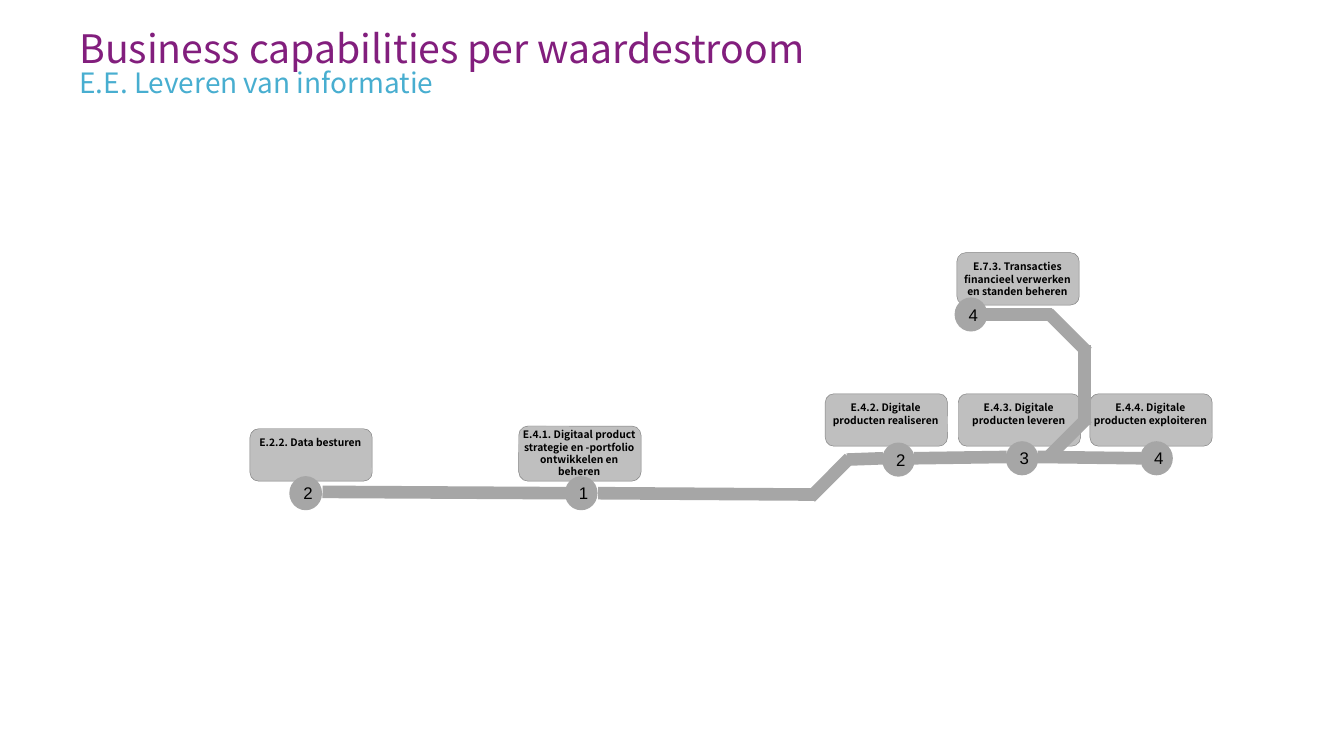
from lxml import etree
from pptx import Presentation
from pptx import util as u
from pptx.dml.color import RGBColor
from pptx.enum import shapes, text
from pptx.oxml import ns

PURPLE = RGBColor(0x82, 0x1E, 0x7D)
BLUE = RGBColor(0x48, 0xAE, 0xD0)
BLACK = RGBColor(0, 0, 0)
SILVER = RGBColor(0xBF, 0xBF, 0xBF)
EDGE = RGBColor(0x80, 0x80, 0x80)
TRACK = RGBColor(0xA6, 0xA6, 0xA6)

SANS, ARIAL = "Noto Sans CJK TC", "Arial"
CELL = u.Inches(0.01)  # the slide is a grid of square cells
COLS, ROWS = 1000, 562.5  # 16:9
CARD, DISC = (91, 39), (23, 24)

# label, card column and row, disc column and row, number
STOPS = [
    ("E.7.3. Transacties financieel verwerken en standen beheren",
     (526, 0), (525, 34), "4"),
    ("E.4.1. Digitaal product strategie en -portfolio ontwikkelen en beheren",
     (200, 129), (235, 167), "1"),
    ("E.2.2. Data besturen", (0, 131), (30, 167), "2"),
    ("E.4.2. Digitale producten realiseren", (428, 105), (471, 142), "2"),
    ("E.4.3. Digitale producten leveren", (527, 105), (563, 141), "3"),
    ("E.4.4. Digitale producten exploiteren", (625, 105), (663, 141), "4"),
]
RAILS = [
    ((663, 153), (586, 152)), ((563, 152), (494, 153)),
    ((235, 179), (54, 178)), ((421, 180), (259, 179)),
    ((417, 182), (446, 153)), ((471, 153), (444, 154)),
    ((594, 152), (623, 123)), ((594, 45), (623, 74)),
    ((597, 46), (548, 46)), ((621, 128), (621, 69)),
]


def cells(*counts):
    return [round(n * CELL) for n in counts]


def put(item, **values):
    for name, value in values.items():
        setattr(item, name, value)


def write(shape, words, font, para=None, **frame):
    """Set one paragraph with font, paragraph and frame formats."""
    put(shape.text_frame, word_wrap=True, **frame)
    line = shape.text_frame.paragraphs[0]
    put(line, **(para or {}))
    run = line.add_run()
    run.text = words
    font = dict(font)
    run.font.color.rgb = font.pop("color")
    put(run.font, **font)


def inset(left, top, right, base):
    sides = ("margin_left", "margin_top", "margin_right", "margin_bottom")
    return dict(zip(sides, cells(left, top, right, base)))


def block(slide, kind, box, fill, edge, width):
    shape = slide.shapes.add_shape(kind, *cells(*box))
    shape.shadow.inherit = False
    shape.fill.solid()
    shape.fill.fore_color.rgb = fill
    shape.line.color.rgb = edge
    shape.line.width = u.Pt(width)
    return shape


def head(slide, left, top):
    lines = [
        ("Business capabilities per waardestroom", 0, (728, 39), 21, PURPLE, u.Pt(28)),
        ("E.E. Leveren van informatie", 30, (755, 22), 15, BLUE, 1.2),
    ]
    for words, drop, size, points, color, space in lines:
        area = slide.shapes.add_textbox(*cells(left, top + drop, *size))
        write(area, words, dict(name=SANS, size=u.Pt(points), color=color),
              dict(line_spacing=space), **inset(0, 0, 0, 0))


def card(slide, left, top, words):
    tall = len(words) > 60  # four lines of text need a higher card
    wide, high = CARD
    shape = block(slide, shapes.MSO_SHAPE.ROUNDED_RECTANGLE,
                  (left, top, wide, high + 2 * tall), SILVER, EDGE, 0.25)
    write(shape, words, dict(name=SANS, size=u.Pt(5.5), bold=True, color=BLACK),
          dict(alignment=text.PP_ALIGN.CENTER),
          vertical_anchor=text.MSO_ANCHOR.TOP, **inset(0, 0 if tall else 4, 1, 4))


def disc(slide, left, top, digit):
    shape = block(slide, shapes.MSO_SHAPE.OVAL, (left, top, *DISC), TRACK, TRACK, 1)
    write(shape, digit, dict(name=ARIAL, size=u.Pt(9), color=BLACK),
          dict(alignment=text.PP_ALIGN.CENTER),
          vertical_anchor=text.MSO_ANCHOR.MIDDLE)


def rail(slide, start, end):
    line = slide.shapes.add_connector(shapes.MSO_CONNECTOR.STRAIGHT,
                                      *cells(*start, *end))
    line.line.color.rgb = TRACK
    line.line.width = u.Pt(6.75)
    etree.SubElement(line._element.spPr, ns.qn("a:effectLst"))


def metro(slide, left, top):
    """Draw the route map: cards, then discs, then rails."""
    def move(spot):
        return left + spot[0], top + spot[1]

    for words, spot, _, _ in STOPS:
        card(slide, *move(spot), words)
    for _, _, spot, digit in STOPS:
        disc(slide, *move(spot), digit)
    for start, end in RAILS:
        rail(slide, move(start), move(end))


def main():
    deck = Presentation()
    deck.slide_width, deck.slide_height = cells(COLS, ROWS)
    slide = deck.slides.add_slide(deck.slide_layouts[6])
    head(slide, 59, 14)
    metro(slide, 186, 188)
    deck.save("out.pptx")


if __name__ == "__main__":
    main()
